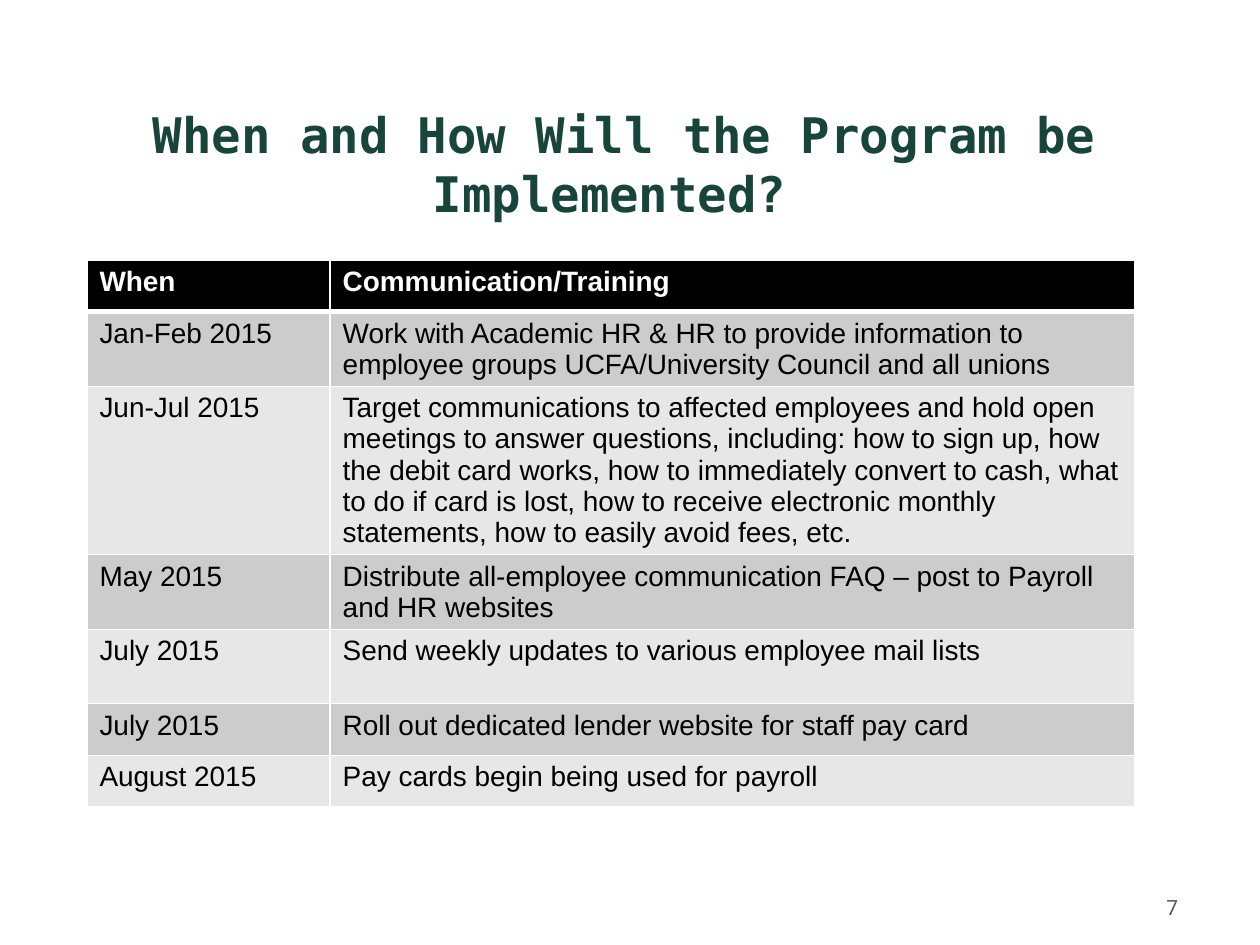
from lxml import etree
from pptx import Presentation
from pptx import util as u
from pptx.dml import color
from pptx.enum import text
from pptx.oxml import ns

COLORS = {"title": "18453B", "header": "000000", "odd": "CCCCCC", "even": "E7E7E7",
          "ink": "000000", "white": "FFFFFF", "number": "595959"}
COLUMNS = [1.93, 6.39]
SCHEDULE = [  # row height, when, communication
    (0.41, "When", "Communication/Training"),
    (0.59, "Jan-Feb 2015", "Work with Academic HR & HR to provide information to "
     "employee groups UCFA/University Council and all unions"),
    (1.33, "Jun-Jul 2015", "Target communications to affected employees and hold open "
     "meetings to answer questions, including: how to sign up, how the debit card works, "
     "how to immediately convert to cash, what to do if card is lost, how to receive "
     "electronic monthly statements, how to easily avoid fees, etc."),
    (0.59, "May 2015", "Distribute all-employee communication FAQ – post to Payroll "
     "and HR websites"),
    (0.59, "July 2015", "Send weekly updates to various employee mail lists"),
    (0.41, "July 2015", "Roll out dedicated lender website for staff pay card"),
    (0.41, "August 2015", "Pay cards begin being used for payroll"),
]


def rgb(name):
    return color.RGBColor.from_string(COLORS[name])


class SlideBuilder:
    def __init__(self, deck):
        self.deck = deck
        self.page = deck.slides.add_slide(deck.slide_layouts[5])

    def area(self, left, top, width, height):
        """Turn shares of the slide's size into lengths."""
        across, down = self.deck.slide_width, self.deck.slide_height
        return [round(share * side) for share, side in
                zip((left, top, width, height), (across, down, across, down))]

    def style(self, frame, font, size, ink, bold=False, align=text.PP_ALIGN.LEFT):
        for para in frame.paragraphs:
            para.alignment = align
            for span in para.runs:
                span.font.name, span.font.size = font, u.Pt(size)
                span.font.bold, span.font.color.rgb = bold, rgb(ink)

    def title(self, words, *shares):
        box = self.page.shapes.title
        box.left, box.top, box.width, box.height = self.area(*shares)
        frame = box.text_frame
        frame.text = words
        frame.word_wrap, frame.auto_size = True, text.MSO_AUTO_SIZE.NONE
        frame.vertical_anchor = text.MSO_ANCHOR.TOP
        self.style(frame, "DejaVu Sans Mono", 28, "title", True, text.PP_ALIGN.CENTER)

    def number(self, words, *shares):
        frame = self.page.shapes.add_textbox(*self.area(*shares)).text_frame
        frame.text = words
        frame.word_wrap, frame.vertical_anchor = True, text.MSO_ANCHOR.MIDDLE
        self.style(frame, "Roboto", 12, "number", align=text.PP_ALIGN.RIGHT)

    def borders(self, cell, widths):
        props = cell._tc.get_or_add_tcPr()
        for side, width in zip("LRTB", widths):
            line = etree.SubElement(props, ns.qn(f"a:ln{side}"), w=str(u.Pt(width)))
            fill = etree.SubElement(line, ns.qn("a:solidFill"))
            etree.SubElement(fill, ns.qn("a:srgbClr"), val=COLORS["white"])

    def table(self, columns, rows, *shares):
        grid = self.page.shapes.add_table(len(rows), len(columns), *self.area(*shares)).table
        for column, width in zip(grid.columns, columns):
            column.width = u.Inches(width)
        for index, (height, *words) in enumerate(rows):
            grid.rows[index].height = u.Inches(height)
            head = index == 0
            shade = "header" if head else "odd" if index % 2 else "even"
            for cell, entry in zip(grid.rows[index].cells, words):
                cell.text = entry
                # The rule under the header is heavier than the others
                self.borders(cell, (1, 1, 3 if index == 1 else 1, 3 if head else 1))
                cell.fill.solid()
                cell.fill.fore_color.rgb = rgb(shade)
                self.style(cell.text_frame, "Arial", 16, "white" if head else "ink", head)


def main():
    deck = Presentation()
    deck.slide_width, deck.slide_height = u.Inches(10), u.Inches(7.5)
    slide = SlideBuilder(deck)
    # Heading; the closing space counts in its centring
    slide.title("When and How Will the Program be Implemented? ", 0.013, 0.104, 0.965, 0.101)
    # Timetable
    slide.table(COLUMNS, SCHEDULE, 0.069, 0.275, 0.832, 0.577)
    # Page number
    slide.number("7", 0.801, 0.933, 0.144, 0.053)
    deck.save("out.pptx")


if __name__ == "__main__":
    main()
